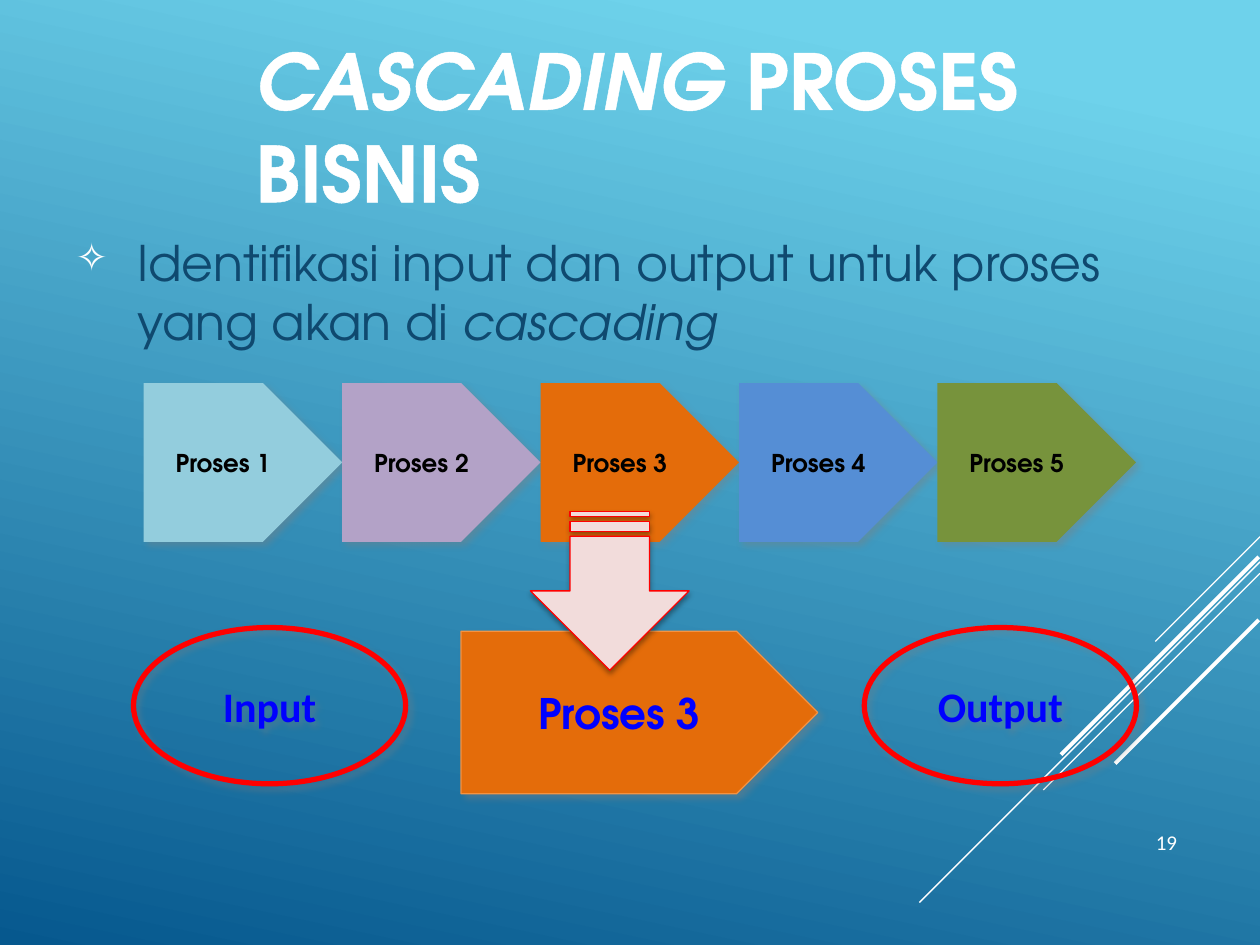
from pptx import Presentation
from pptx import util as u
from pptx.dml import color
from pptx.enum import shapes, text
from pptx.oxml import parse_xml
from pptx.oxml import ns

Pt = u.Pt
KIND = shapes.MSO_SHAPE
MID = text.MSO_ANCHOR.MIDDLE
FONT = "TeX Gyre Adventor"
SOFT = ("808080", 40, 4, 3, 45)
DROP = ("000000", 35, 3.1, 1.8, 90)


def rgb(code):
    """Turn a hex string into a colour."""
    return color.RGBColor.from_string(code)


def node(body):
    """Parse a DrawingML fragment."""
    head, tail = body.split(" ", 1)
    return parse_xml(f"{head} {ns.nsdecls('a')} {tail}")


def shade(shape, tone, alpha, blur, dist, angle):
    """Give a shape an outer shadow."""
    shape.shadow.inherit = False
    shape._element.spPr.find(ns.qn("a:effectLst")).append(node(
        f'<a:outerShdw blurRad="{Pt(blur)}" dist="{Pt(dist)}" '
        f'dir="{angle * 60000}" rotWithShape="0"><a:srgbClr val="{tone}">'
        f'<a:alpha val="{alpha * 1000}"/></a:srgbClr></a:outerShdw>'))


def write(shape, parts, tone, anchor=MID, align=None, **style):
    """Fill a shape with one paragraph of (words, italic) parts."""
    frame = shape.text_frame
    frame.word_wrap = True
    frame.vertical_anchor = anchor
    para = frame.paragraphs[0]
    para.alignment = align
    for words, slant in parts:
        run = para.add_run()
        run.text = words
        run.font.color.rgb = rgb(tone)
        for key, value in {**style, "italic": slant}.items():
            setattr(run.font, key, value)
    return para


def label(slide, box, parts, tone, **style):
    """Add a text box and return its paragraph."""
    return write(slide.shapes.add_textbox(*map(Pt, box)), parts, tone, **style)


def draw(slide, kind, box, fill=None, line=None, width=0.75, shadow=SOFT):
    """Add a preset shape with its fill, line and shadow."""
    shape = slide.shapes.add_shape(kind, *map(Pt, box))
    if fill:
        shape.fill.solid()
        shape.fill.fore_color.rgb = rgb(fill)
    else:
        shape.fill.background()
    if line:
        shape.line.color.rgb = rgb(line)
        shape.line.width = Pt(width)
    else:
        shape.line.fill.background()
    shade(shape, *shadow)
    return shape


def name(shape, words, tone, size, font=FONT):
    """Write a bold centred name in a shape."""
    write(shape, [(words, None)], tone, align=text.PP_ALIGN.CENTER,
          size=Pt(size), name=font, bold=True)


def back(slide):
    """Paint the blue gradient background."""
    fill = slide.background.fill
    fill.gradient()
    fill.gradient_angle = 258
    stops = ((0.1, "6ED2EB"), (1, "06588E"))
    for stop, (place, tone) in zip(fill.gradient_stops, stops):
        stop.position = place
        stop.color.rgb = rgb(tone)


def rays(slide, right, top):
    """Draw the diagonal lines that run down from the right edge."""
    for dx, dy, run, width in ((0, 0, 59.8, 0.75), (0, 14.4, 194.6, 0.75),
                               (0, 20.9, 123.8, 0.75), (0.7, 11.5, 113, 2.25),
                               (0.7, 47.5, 82.1, 2.25)):
        x, y = right - dx, top + dy
        ends = map(Pt, (x, y, x - run, y + run))
        ray = slide.shapes.add_connector(shapes.MSO_CONNECTOR.STRAIGHT, *ends)
        ray.line.color.rgb = rgb("FFFFFF")
        ray.line.width = Pt(width)
        ray._element.spPr.append(node("<a:effectLst />"))


def title(slide, box):
    """Write the outlined title."""
    para = label(slide, box, [("CASCADING", True), (" PROSES BISNIS", False)],
                 "FFFFFF", size=Pt(44), name=FONT, bold=True)
    for run in para.runs:
        run.font._element.insert(0, node(
            f'<a:ln w="{Pt(2.48)}"><a:solidFill><a:srgbClr val="FFFFFF"/>'
            '</a:solidFill></a:ln>'))


def lead(slide, box):
    """Write the bulleted sentence."""
    para = label(slide, box, [
        ("Identifikasi input dan output untuk proses yang akan di ", False),
        ("cascading", True)], "0F496F", size=Pt(28), name=FONT)
    para.space_before = para.space_after = Pt(6)
    props = para._p.get_or_add_pPr()
    props.set("marL", str(Pt(35.3)))
    props.set("indent", str(-Pt(35.3)))
    for mark in ('<a:buClr ><a:srgbClr val="FFFFFF"/></a:buClr>',
                 '<a:buSzPct val="80000"/>', '<a:buChar char="✧"/>'):
        props.append(node(mark))


def chain(slide, box):
    """Draw the row of five processes."""
    left, top, wide, high = box
    tones = ("93CDDD", "B3A2C7", "E46C0A", "558ED5", "77933C")
    step = wide / len(tones)
    for i, tone in enumerate(tones):
        plate = draw(slide, KIND.PENTAGON, (left + i * step, top, step, high), tone)
        name(plate, f"Proses {i + 1}", "000000", 14)


def focus(slide, box):
    """Draw the chosen process between its input and output."""
    left, top, wide, high = box
    plate = draw(slide, KIND.PENTAGON, (left + 187.2, top + 2.1, 203.8, high - 2.1),
                 "E46C0A", "F69240")
    name(plate, "Proses 3", "0000FF", 24)
    oval = 155.5
    for x, words in ((left, "Input"), (left + wide - oval, "Output")):
        ring = draw(slide, KIND.OVAL, (x, top, oval, 89.3), None, "FF0000", 3)
        name(ring, words, "0000FF", 24, "Calibri")


def arrow(slide, box):
    """Draw the striped arrow that points down."""
    shape = draw(slide, KIND.STRIPED_RIGHT_ARROW, box, "F2DCDB", "FF0000", shadow=DROP)
    shape.rotation = 90


def main():
    """Build and save the slide."""
    deck = Presentation()
    deck.slide_width, deck.slide_height = Pt(720), Pt(540)
    slide = deck.slides.add_slide(deck.slide_layouts[6])
    back(slide)
    rays(slide, 720, 306.7)
    title(slide, (139, 26.6, 581, 90))
    lead(slide, (36, 126, 648, 81.4))
    label(slide, (612, 439.2, 67.7, 52.6), [("19", None)], "FFFFFF",
          anchor=text.MSO_ANCHOR.BOTTOM, align=text.PP_ALIGN.RIGHT,
          size=Pt(12), name="Calibri")
    focus(slide, (76.3, 358.6, 573.1, 95))
    chain(slide, (82.1, 218.9, 567, 90.7))
    arrow(slide, (303.1, 292.3, 90.7, 90.7))
    deck.save("out.pptx")


if __name__ == "__main__":
    main()
